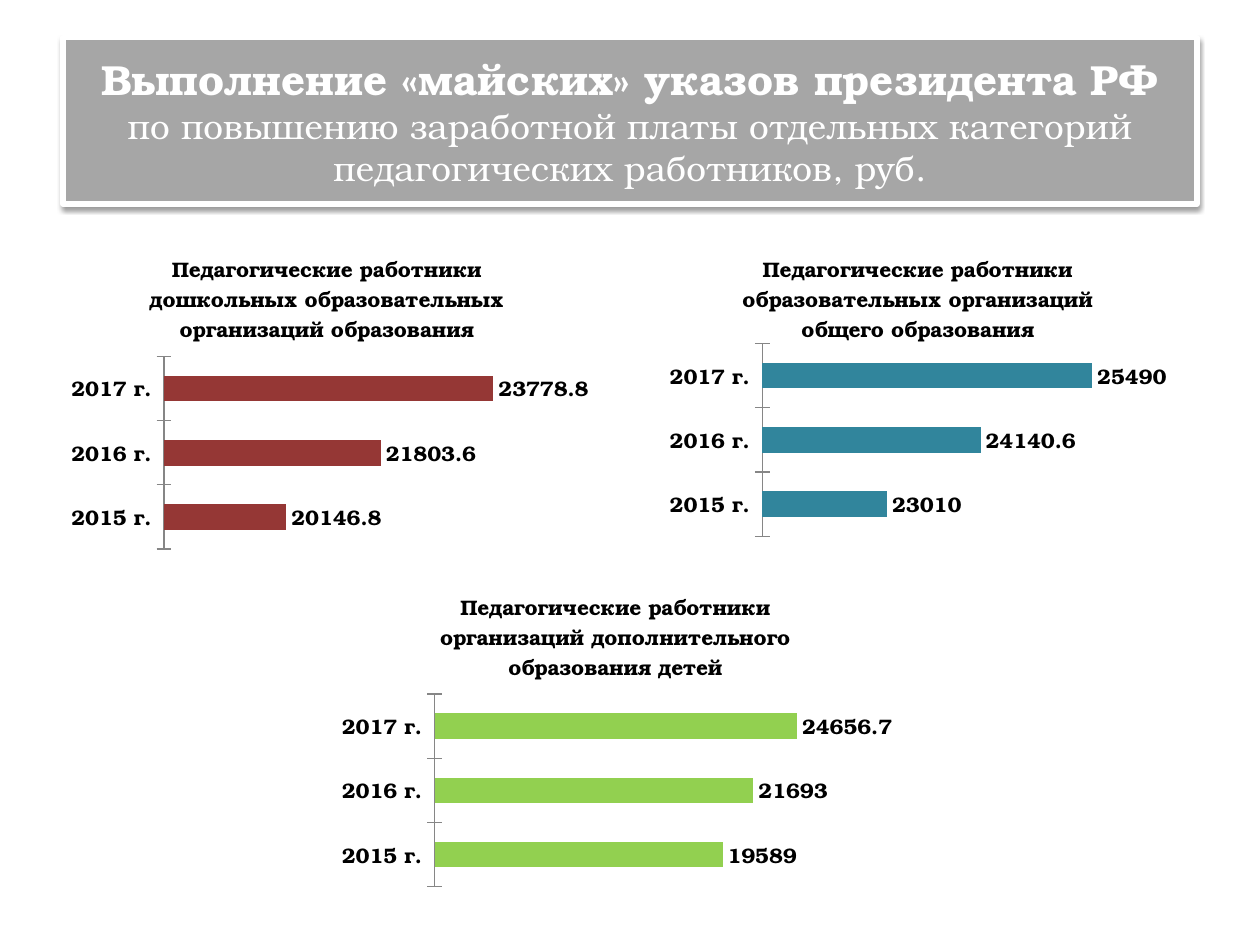
from dataclasses import dataclass

from lxml.etree import SubElement
from pptx import Presentation
from pptx.chart.data import CategoryChartData
from pptx.dml.color import RGBColor
from pptx.enum.chart import XL_CHART_TYPE as ChartType
from pptx.enum.chart import XL_LABEL_POSITION as LabelPosition
from pptx.enum.chart import XL_TICK_LABEL_POSITION as TickLabelPosition
from pptx.enum.chart import XL_TICK_MARK as TickMark
from pptx.enum.shapes import MSO_SHAPE as ShapeType
from pptx.enum.text import MSO_ANCHOR as Anchor
from pptx.enum.text import PP_ALIGN as Align
from pptx.oxml import parse_xml
from pptx.oxml.ns import nsdecls, qn
from pptx.util import Inches, Pt


@dataclass(frozen=True)
class Theme:
    font: str = "TeX Gyre Bonum"
    heading_size: int = 24
    subheading_size: int = 20
    chart_size: int = 12
    white: str = "FFFFFF"
    black: str = "000000"
    banner: str = "A6A6A6"
    axis: str = "868686"


@dataclass(frozen=True)
class SalaryChart:
    title: str
    left: float
    top: float
    width: float
    color: str
    values: tuple[float, ...]
    minimum: float
    maximum: float
    plot: tuple[float, float, float, float]


THEME = Theme()
CHART_HEIGHT = 2.55
YEARS = ("2015 г.", "2016 г.", "2017 г.")
CHARTS = (
    SalaryChart(
        "Педагогические работники образовательных организаций общего образования",
        5.08, 1.86, 4.41, "31859C", (23010, 24140.6, 25490),
        21500, 26000, (0.22, 0.34, 0.67, 0.6),
    ),
    SalaryChart(
        "Педагогические работники дошкольных образовательных организаций образования",
        0.51, 1.86, 4.17, "953735", (20146.8, 21803.6, 23778.8),
        18000, 25000, (0.19, 0.38, 0.76, 0.6),
    ),
    SalaryChart(
        "Педагогические работники организаций дополнительного образования детей",
        2.64, 4.54, 4.49, "92D050", (19589, 21693, 24656.7),
        0, 30000, (0.18, 0.38, 0.78, 0.6),
    ),
)


def style_font(font, size: int, color: str, bold: bool) -> None:
    font.name = THEME.font
    font.size = Pt(size)
    font.bold = bold
    font.color.rgb = RGBColor.from_string(color)


def add_banner(slide) -> None:
    banner = slide.shapes.add_shape(
        ShapeType.RECTANGLE, Inches(0.5), Inches(0.3), Inches(9), Inches(1.32)
    )
    banner.fill.solid()
    banner.fill.fore_color.rgb = RGBColor.from_string(THEME.banner)
    banner.line.color.rgb = RGBColor.from_string(THEME.white)
    banner.line.width = Pt(3)
    banner.shadow.inherit = False
    effects = banner.element.spPr.find(qn("a:effectLst"))
    effects.append(parse_xml(
        f'<a:outerShdw {nsdecls("a")} blurRad="{Pt(3.1)}" dist="{Pt(1.6)}" '
        'dir="5400000" rotWithShape="0">'
        f'<a:srgbClr val="{THEME.black}"><a:alpha val="38000"/></a:srgbClr>'
        '</a:outerShdw>'
    ))
    frame = banner.text_frame
    frame.word_wrap = True
    frame.vertical_anchor = Anchor.MIDDLE
    paragraph = frame.paragraphs[0]
    paragraph.alignment = Align.CENTER
    for text, size, bold in (
        ("Выполнение «майских» указов президента РФ ", THEME.heading_size, True),
        ("по повышению заработной платы отдельных категорий "
         "педагогических работников, руб.", THEME.subheading_size, False),
    ):
        run = paragraph.add_run()
        run.text = text
        style_font(run.font, size, THEME.white, bold)


def place_plot(chart, plot: tuple[float, float, float, float]) -> None:
    plot_area = chart.element.chart.plotArea
    layout = plot_area.find(qn("c:layout"))
    if layout is None:
        layout = parse_xml(f'<c:layout {nsdecls("c")}/>')
        plot_area.insert(0, layout)
    manual = SubElement(layout, qn("c:manualLayout"))
    settings = [("layoutTarget", "inner"), ("xMode", "edge"), ("yMode", "edge")]
    settings += zip("xywh", map(str, plot))
    for name, value in settings:
        SubElement(manual, qn(f"c:{name}")).set("val", value)


def add_salary_chart(slide, salary: SalaryChart) -> None:
    data = CategoryChartData()
    data.categories = YEARS
    data.add_series(salary.title, salary.values)
    chart = slide.shapes.add_chart(
        ChartType.BAR_CLUSTERED, Inches(salary.left), Inches(salary.top),
        Inches(salary.width), Inches(CHART_HEIGHT), data,
    ).chart
    style_font(chart.font, THEME.chart_size, THEME.black, True)
    chart.has_legend = False
    chart.has_title = True
    chart.chart_title.include_in_layout = False
    title = chart.chart_title.text_frame
    title.text = salary.title
    style_font(title.paragraphs[0].runs[0].font, THEME.chart_size, THEME.black, True)

    value_axis = chart.value_axis
    value_axis.minimum_scale = salary.minimum
    value_axis.maximum_scale = salary.maximum
    value_axis.has_major_gridlines = False
    value_axis.visible = False

    category_axis = chart.category_axis
    category_axis.major_tick_mark = TickMark.CROSS
    category_axis.tick_label_position = TickLabelPosition.LOW
    category_axis.format.line.color.rgb = RGBColor.from_string(THEME.axis)
    style_font(category_axis.tick_labels.font, THEME.chart_size, THEME.black, True)

    bars = chart.plots[0]
    bars.vary_by_categories = False
    bars.gap_width = 150
    fill = bars.series[0].format.fill
    fill.solid()
    fill.fore_color.rgb = RGBColor.from_string(salary.color)
    bars.has_data_labels = True
    labels = bars.data_labels
    labels.show_value = True
    labels.position = LabelPosition.OUTSIDE_END
    labels.number_format = "General"
    labels.number_format_is_linked = False
    style_font(labels.font, THEME.chart_size, THEME.black, True)
    place_plot(chart, salary.plot)


def main() -> None:
    presentation = Presentation()
    presentation.slide_width = Inches(10)
    presentation.slide_height = Inches(7.5)
    slide = presentation.slides.add_slide(presentation.slide_layouts[6])
    add_banner(slide)
    for salary in CHARTS:
        add_salary_chart(slide, salary)
    presentation.save("out.pptx")


if __name__ == "__main__":
    main()
